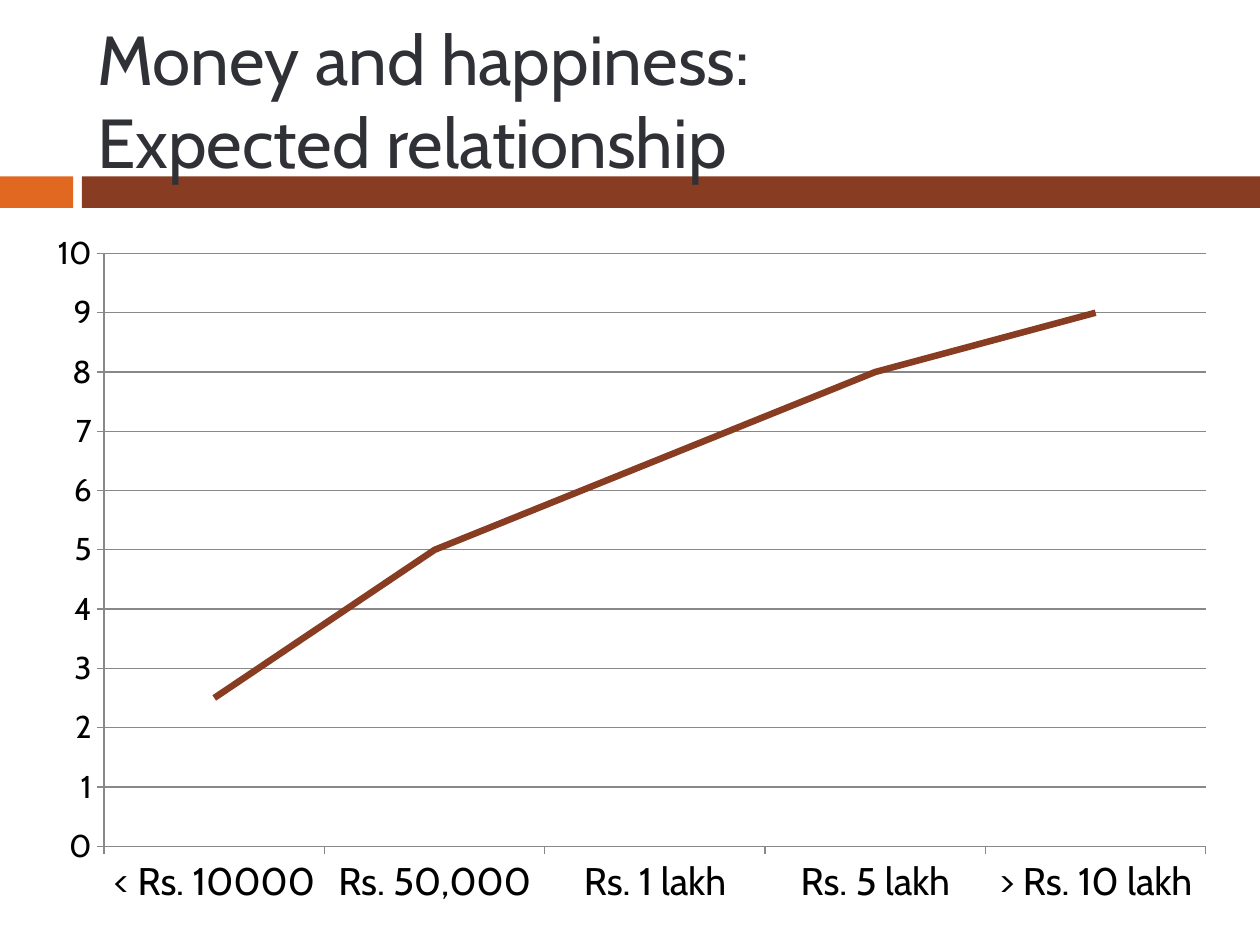
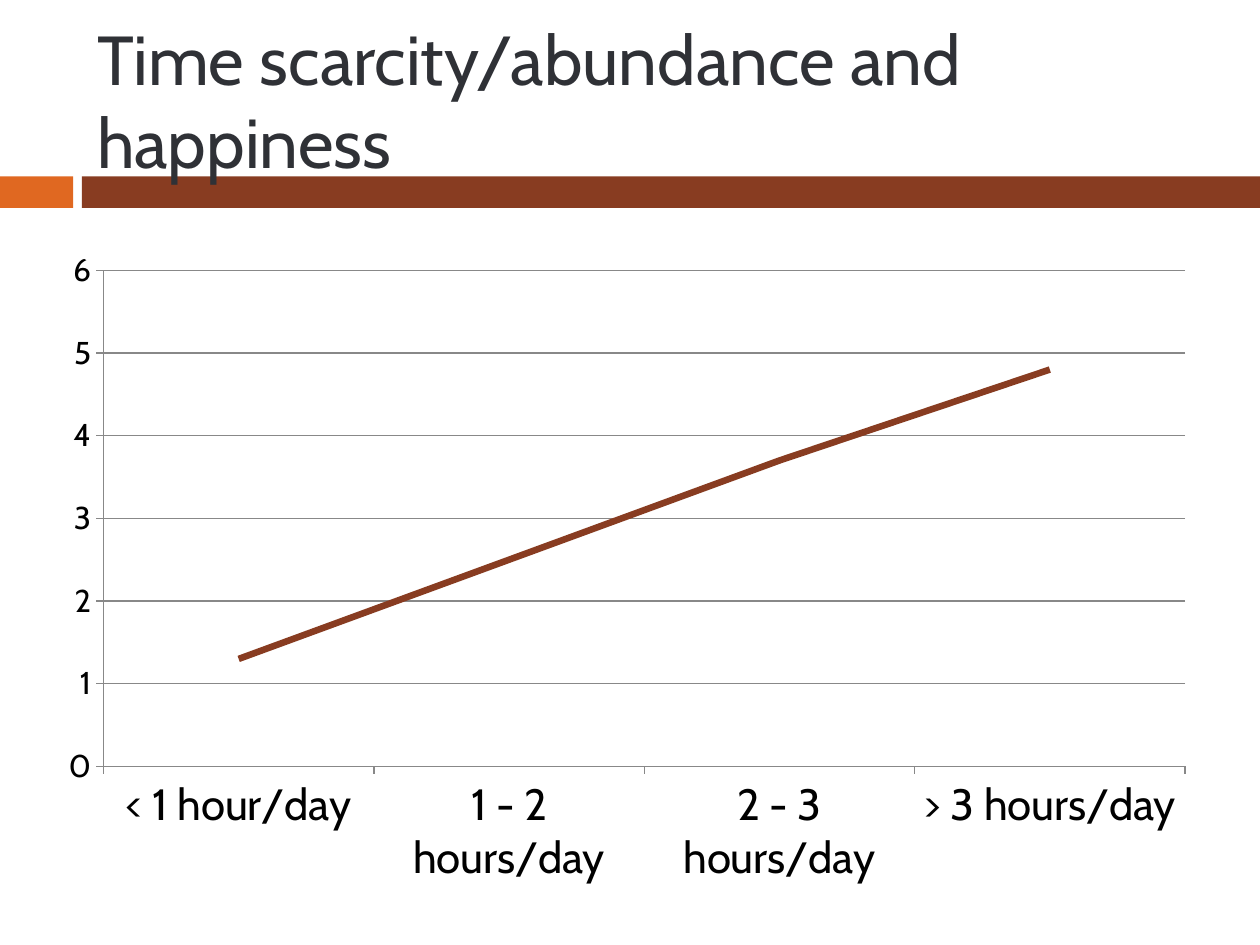
from dataclasses import dataclass

from pptx import Presentation
from pptx.chart.data import CategoryChartData
from pptx.dml.color import RGBColor
from pptx.enum.chart import XL_CHART_TYPE, XL_TICK_MARK
from pptx.enum.shapes import MSO_SHAPE
from pptx.enum.text import MSO_ANCHOR, MSO_AUTO_SIZE, PP_ALIGN
from pptx.util import Inches, Pt

WIDTH, HEIGHT = 10, 7.5
FONT = "Cabin"
COLORS = {
    "title": "2F3136",
    "accent": "E06821",
    "main": "883C21",
    "axis": "888888",
    "label": "000000",
}


@dataclass(frozen=True)
class Area:
    """A rectangle in inches."""
    left: float
    top: float
    width: float
    height: float

    def lengths(self) -> tuple:
        return tuple(Inches(n) for n in (self.left, self.top, self.width, self.height))


@dataclass(frozen=True)
class Band:
    area: Area
    color: str


@dataclass(frozen=True)
class LinePage:
    title: str
    area: Area
    points: dict[str, float]
    maximum: int
    category_size: int


# Shared parts: title area and the two-part band under it
TITLE_AREA = Area(0.67, 0.25, 8.92, 1.08)
BAND_TOP, BAND_HEIGHT, BAND_SPLIT = 1.4, 0.25, 0.65
BANDS = (
    Band(Area(0, BAND_TOP, 0.58, BAND_HEIGHT), "accent"),
    Band(Area(BAND_SPLIT, BAND_TOP, WIDTH - BAND_SPLIT, BAND_HEIGHT), "main"),
)

PAGES = (
    LinePage(
        "Money and happiness:\vExpected relationship",
        Area(0.27, 1.75, 9.49, 5.54),
        {"< Rs. 10000": 2.5, "Rs. 50,000": 5, "Rs. 1 lakh": 6.5,
         "Rs. 5 lakh": 8, "> Rs. 10 lakh": 9},
        maximum=10,
        category_size=22,
    ),
    LinePage(
        "Time scarcity/abundance and happiness",
        Area(0.36, 1.89, 9.23, 5.23),
        {"< 1 hour/day": 1.3, "1 - 2 hours/day": 2.5,
         "2 - 3 hours/day": 3.7, "> 3 hours/day": 4.8},
        maximum=6,
        category_size=25,
    ),
)


def color(name: str) -> RGBColor:
    return RGBColor.from_string(COLORS[name])


def set_font(font, size: float, color_name: str) -> None:
    font.name = FONT
    font.size = Pt(size)
    font.color.rgb = color(color_name)


def set_line(line, width: float, color_name: str) -> None:
    line.width = Pt(width)
    line.color.rgb = color(color_name)


def draw_band(page, band: Band) -> None:
    box = page.shapes.add_shape(MSO_SHAPE.RECTANGLE, *band.area.lengths())
    box.shadow.inherit = False
    box.fill.solid()
    box.fill.fore_color.rgb = color(band.color)
    box.line.fill.background()


def draw_title(page, text: str) -> None:
    title = page.shapes.title
    title.left, title.top, title.width, title.height = TITLE_AREA.lengths()
    frame = title.text_frame
    frame.text = text
    frame.word_wrap = True
    frame.auto_size = MSO_AUTO_SIZE.NONE
    frame.vertical_anchor = MSO_ANCHOR.MIDDLE
    para = frame.paragraphs[0]
    para.alignment = PP_ALIGN.LEFT
    set_font(para.font, 39.6, "title")
    # The descenders of the title overlap the band, so it goes on top
    page.shapes._spTree.append(title._element)


def draw_chart(page, content: LinePage) -> None:
    data = CategoryChartData()
    data.categories = list(content.points)
    data.add_series("Series 1", content.points.values())
    chart = page.shapes.add_chart(
        XL_CHART_TYPE.LINE, *content.area.lengths(), data).chart
    chart.has_legend = False
    chart.has_title = False
    set_font(chart.font, 18, "label")

    # Axes and gridlines
    values, categories = chart.value_axis, chart.category_axis
    values.minimum_scale, values.maximum_scale = 0, content.maximum
    values.major_unit = 1
    values.has_major_gridlines = True
    set_line(values.major_gridlines.format.line, 0.75, "axis")
    for axis, size in ((values, 18), (categories, content.category_size)):
        axis.major_tick_mark = XL_TICK_MARK.OUTSIDE
        axis.minor_tick_mark = XL_TICK_MARK.NONE
        set_line(axis.format.line, 0.75, "axis")
        set_font(axis.tick_labels.font, size, "label")

    # Data line
    series = chart.plots[0].series[0]
    series.smooth = False
    set_line(series.format.line, 3.75, "main")


def main() -> None:
    deck = Presentation()
    deck.slide_width, deck.slide_height = Inches(WIDTH), Inches(HEIGHT)
    title_only = deck.slide_layouts.get_by_name("Title Only")
    for content in PAGES:
        page = deck.slides.add_slide(title_only)
        for band in BANDS:
            draw_band(page, band)
        draw_title(page, content.title)
        draw_chart(page, content)
    deck.save("out.pptx")


if __name__ == "__main__":
    main()
